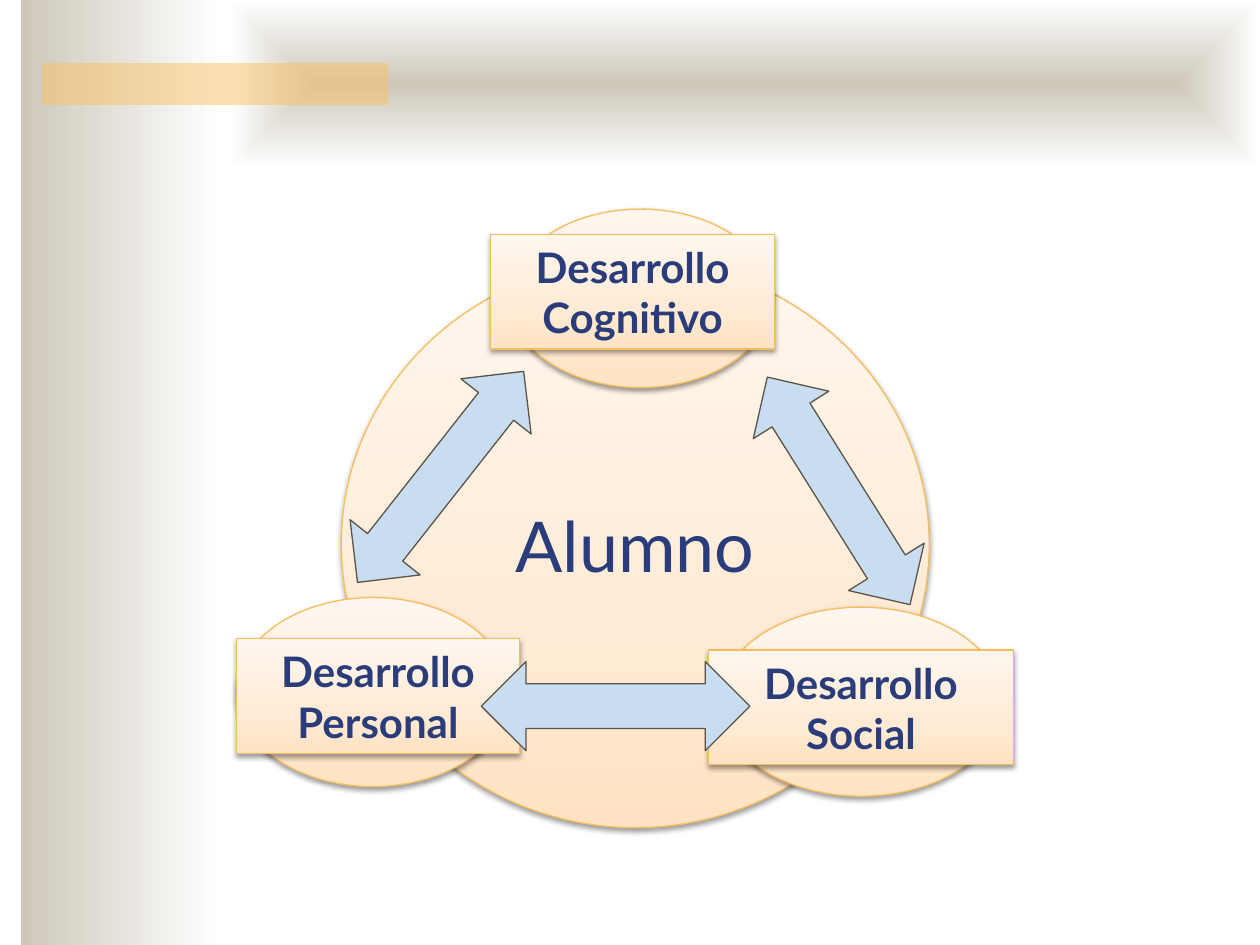
from pptx import Presentation
from pptx.dml.color import RGBColor
from pptx.enum.shapes import MSO_SHAPE
from pptx.enum.text import MSO_ANCHOR, PP_ALIGN
from pptx.oxml import parse_xml
from pptx.oxml.ns import nsdecls, qn
from pptx.util import Pt

COLORS = {
    "sand": "CEC8BA", "white": "FFFFFF", "amber": "FAC164",
    "peach": "FFE3C3", "peach_mid": "FFEBD5", "peach_light": "FFF7EF",
    "peach_line": "F8BE5E", "navy": "2A3D7A",
    "arrow": "C9DDF1", "arrow_line": "5B5249",
}
BACKDROP = [(0, "sand"), (100, "white")]
PEACH = [(0, "peach"), (35, "peach_mid"), (100, "peach_light")]
LINEAR = '<a:lin ang="{}" scaled="0"/>'
FROM_CENTRE = ('<a:path path="shape"><a:fillToRect l="50000" t="50000" '
               'r="50000" b="50000"/></a:path>')
SHADOW = (f'<a:outerShdw {nsdecls("a")} blurRad="39400" dist="20300" dir="5400000" '
          'rotWithShape="0"><a:srgbClr val="000000"><a:alpha val="38000"/>'
          '</a:srgbClr></a:outerShdw>')

prs = Presentation()
prs.slide_width, prs.slide_height = Pt(720), Pt(540)
slide = prs.slides.add_slide(prs.slide_layouts[6])


def add_shape(kind, box, fill, line=None, direction=""):
    """Add a shape whose fill is a colour name or a list of gradient stops."""
    shape = slide.shapes.add_shape(kind, *(Pt(v) for v in box))
    shape.shadow.inherit = False
    if isinstance(fill, str):
        shape.fill.solid()
        shape.fill.fore_color.rgb = RGBColor.from_string(COLORS[fill])
    else:
        shape.fill.gradient()
        stops = "".join(f'<a:gs pos="{pos * 1000}"><a:srgbClr val="{COLORS[name]}"/></a:gs>'
                        for pos, name in fill)
        properties = shape._element.spPr
        properties.replace(properties.find(qn("a:gradFill")), parse_xml(
            f'<a:gradFill {nsdecls("a")} rotWithShape="1"><a:gsLst>{stops}</a:gsLst>'
            f'{direction}</a:gradFill>'))
    if line:
        shape.line.color.rgb = RGBColor.from_string(COLORS[line])
        shape.line.width = Pt(0.75)
    else:
        shape.line.fill.background()
    return shape


def add_peach(kind, box, lines=(), size=24, bold=True):
    """Add a shadowed peach shape with centred lines of text."""
    shape = add_shape(kind, box, PEACH, "peach_line", LINEAR.format(16200000))
    shape._element.spPr.find(qn("a:effectLst")).append(parse_xml(SHADOW))
    frame = shape.text_frame
    frame.vertical_anchor = MSO_ANCHOR.MIDDLE
    frame.word_wrap = bold
    for i, line in enumerate(lines):
        paragraph = frame.paragraphs[0] if i == 0 else frame.add_paragraph()
        paragraph.text = line
        paragraph.alignment = PP_ALIGN.CENTER
        paragraph.font.name = "Lato"
        paragraph.font.size = Pt(size)
        paragraph.font.bold = bold
        paragraph.font.color.rgb = RGBColor.from_string(COLORS["navy"])


# Backdrop: side band, top band and translucent accent bar
add_shape(MSO_SHAPE.RECTANGLE, (12, 0, 114, 540), BACKDROP, direction=LINEAR.format(0))
add_shape(MSO_SHAPE.RECTANGLE, (132, 0, 588, 96), BACKDROP, direction=FROM_CENTRE)
accent = add_shape(MSO_SHAPE.RECTANGLE, (24, 36, 198, 24), "amber")
accent_color = accent._element.spPr.find(qn("a:solidFill"))[0]
accent_color.append(parse_xml(f'<a:alpha {nsdecls("a")} val="50000"/>'))

# Student circle and the three ovals around it
add_peach(MSO_SHAPE.FLOWCHART_CONNECTOR, (195, 149, 336, 324), ["Alumno"], 40, False)
for oval in [(291, 119.5, 150, 102), (135, 341.5, 156, 108), (411, 347, 162, 108)]:
    add_peach(MSO_SHAPE.FLOWCHART_CONNECTOR, oval)

# Development labels
for area, left, top, width in [("Personal", 135, 365, 162),
                               ("Social", 405, 371.5, 174),
                               ("Cognitivo", 280.5, 134, 162)]:
    add_peach(MSO_SHAPE.RECTANGLE, (left, top, width, 65.5), ["Desarrollo", area])

# Arrows linking the three areas
for left, top, rotation in [(175, 247, 128.2), (402.5, 255, 237.9), (275, 378, 180)]:
    arrow = add_shape(MSO_SHAPE.LEFT_RIGHT_ARROW, (left, top, 153.5, 51),
                      "arrow", "arrow_line")
    arrow.rotation = rotation

prs.save("out.pptx")
